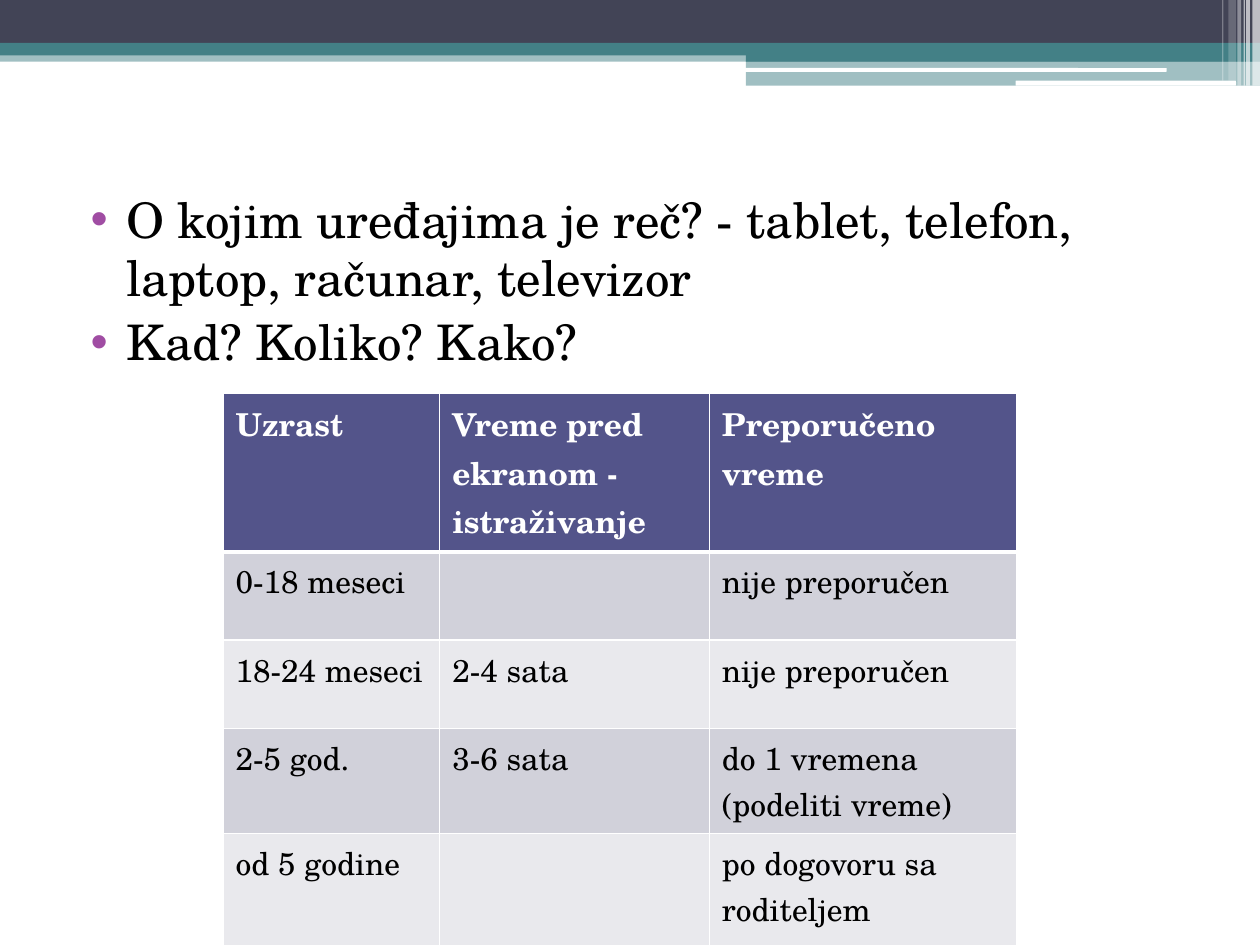
import lxml.etree
import pptx
import pptx.dml.color
import pptx.enum.shapes
import pptx.enum.text
import pptx.oxml.ns
import pptx.util

Inches = pptx.util.Inches
Pt = pptx.util.Pt
qn = pptx.oxml.ns.qn
FONT = "TeX Gyre Schola"

BANDS = [
    (0, 0.4, 10, 0.09, "438086", 50),
    (0, 0, 10, 0.34, "424456", 100),
    (0, 0.34, 10, 0.1, "438086", 100),
    (5.92, 0.39, 4.08, 0.1, "438086", 100),
    (5.92, 0.48, 4.08, 0.2, "438086", 50),
]
ROUNDED_LINES = [
    (5.91, 0.54, 3.35, 0.03, "FFFFFF", 100),
    (8.06, 0.64, 1.75, 0.04, "FFFFFF", 100),
]
STRIPES = [
    (9.94, 0.06, 0.68, 65),
    (9.89, 0.03, 0.68, 65),
    (9.87, 0.01, 0.68, 60),
    (9.82, 0.03, 0.68, 40),
    (9.75, 0.06, 0.64, 20),
    (9.7, 0.01, 0.64, 30),
]
QUESTIONS = [
    "O kojim uređajima je reč? - tablet, telefon, laptop, računar, televizor",
    "Kad? Koliko? Kako?",
]
SCREEN_TIME = [
    ("Uzrast", "Vreme pred ekranom - istraživanje", "Preporučeno vreme"),
    ("0-18 meseci", "", "nije preporučen"),
    ("18-24 meseci", "2-4 sata", "nije preporučen"),
    ("2-5 god.", "3-6 sata", "do 1 vremena (podeliti vreme)"),
    ("od 5 godine", "", "po dogovoru sa roditeljem"),
]
COLUMN_WIDTHS = [1.72, 2.14, 2.44]
ROW_HEIGHTS = [1, 0.7, 0.7, 0.71, 0.9]


def color(value):
    return pptx.dml.color.RGBColor.from_string(value)


def apply_format(target, values):
    for name, value in values.items():
        setattr(target, name, value)


def format_font(font, size, value, bold=False):
    apply_format(font, {"name": FONT, "size": Pt(size), "bold": bold})
    font.color.rgb = color(value)


def add_band(slide, kind, box, fill, opacity):
    band = slide.shapes.add_shape(kind, *map(Inches, box))
    band.shadow.inherit = False
    band.line.fill.background()
    band.fill.solid()
    band.fill.fore_color.rgb = color(fill)
    if opacity < 100:
        tint = band.fill._xPr.find(qn("a:solidFill"))[0]
        lxml.etree.SubElement(tint, qn("a:alpha"), val=str(opacity * 1000))


def add_header(slide, left, top):
    kinds = pptx.enum.shapes.MSO_SHAPE
    stripes = [(x, 0, w, h, "FFFFFF", a) for x, w, h, a in STRIPES]
    groups = [
        (kinds.RECTANGLE, BANDS),
        (kinds.ROUNDED_RECTANGLE, ROUNDED_LINES),
        (kinds.RECTANGLE, stripes),
    ]
    for kind, parts in groups:
        for x, y, width, height, fill, opacity in parts:
            add_band(slide, kind, (left + x, top + y, width, height), fill, opacity)


def add_bullet(paragraph):
    properties = paragraph._p.get_or_add_pPr()
    apply_format(paragraph, {"space_before": Pt(3), "line_spacing": 1.0})
    properties.set("marL", str(Inches(0.4)))
    properties.set("indent", str(Inches(-0.28)))
    tint = lxml.etree.SubElement(properties, qn("a:buClr"))
    lxml.etree.SubElement(tint, qn("a:srgbClr"), val="A04DA3")
    lxml.etree.SubElement(properties, qn("a:buFont"), typeface="Arial")
    lxml.etree.SubElement(properties, qn("a:buChar"), char="•")


def fill_questions(body, left, top, width, height):
    apply_format(body, {
        "left": Inches(left), "top": Inches(top),
        "width": Inches(width), "height": Inches(height),
    })
    frame = body.text_frame
    apply_format(frame, {
        "word_wrap": True,
        "auto_size": pptx.enum.text.MSO_AUTO_SIZE.NONE,
        "vertical_anchor": pptx.enum.text.MSO_ANCHOR.TOP,
    })
    frame.text = "\n".join(QUESTIONS)
    for paragraph in frame.paragraphs:
        add_bullet(paragraph)
        format_font(paragraph.runs[0].font, 28, "000000")


def add_borders(cell, top, bottom):
    properties = cell._tc.get_or_add_tcPr()
    widths = {"a:lnL": 1, "a:lnR": 1, "a:lnT": top, "a:lnB": bottom}
    for side, width in widths.items():
        border = lxml.etree.SubElement(properties, qn(side), w=str(Pt(width)))
        fill = lxml.etree.SubElement(border, qn("a:solidFill"))
        lxml.etree.SubElement(fill, qn("a:srgbClr"), val="FFFFFF")


def add_screen_time(slide, left, top, width, height):
    table = slide.shapes.add_table(
        len(SCREEN_TIME), len(COLUMN_WIDTHS), *map(Inches, (left, top, width, height))
    ).table
    for column, column_width in zip(table.columns, COLUMN_WIDTHS):
        column.width = Inches(column_width)
    for index, (row, texts) in enumerate(zip(table.rows, SCREEN_TIME)):
        row.height = Inches(ROW_HEIGHTS[index])
        heading = index == 0
        fill = "53548A" if heading else ("E9E9ED", "D1D1DA")[index % 2]
        for cell, text in zip(row.cells, texts):
            add_borders(cell, 3 if index == 1 else 1, 3 if heading else 1)
            cell.fill.solid()
            cell.fill.fore_color.rgb = color(fill)
            cell.text = text
            for run in cell.text_frame.paragraphs[0].runs:
                format_font(run.font, 18, "FFFFFF" if heading else "000000", heading)


def main():
    presentation = pptx.Presentation()
    apply_format(presentation, {"slide_width": Inches(10), "slide_height": Inches(7.5)})
    slide = presentation.slides.add_slide(presentation.slide_layouts[1])
    title = slide.shapes.title._element
    title.getparent().remove(title)
    add_header(slide, 0, 0)
    fill_questions(slide.placeholders[1], 0.5, 1.45, 9, 5.74)
    add_screen_time(slide, 1.77, 3.12, 6.3, 4.01)
    presentation.save("out.pptx")


if __name__ == "__main__":
    main()
